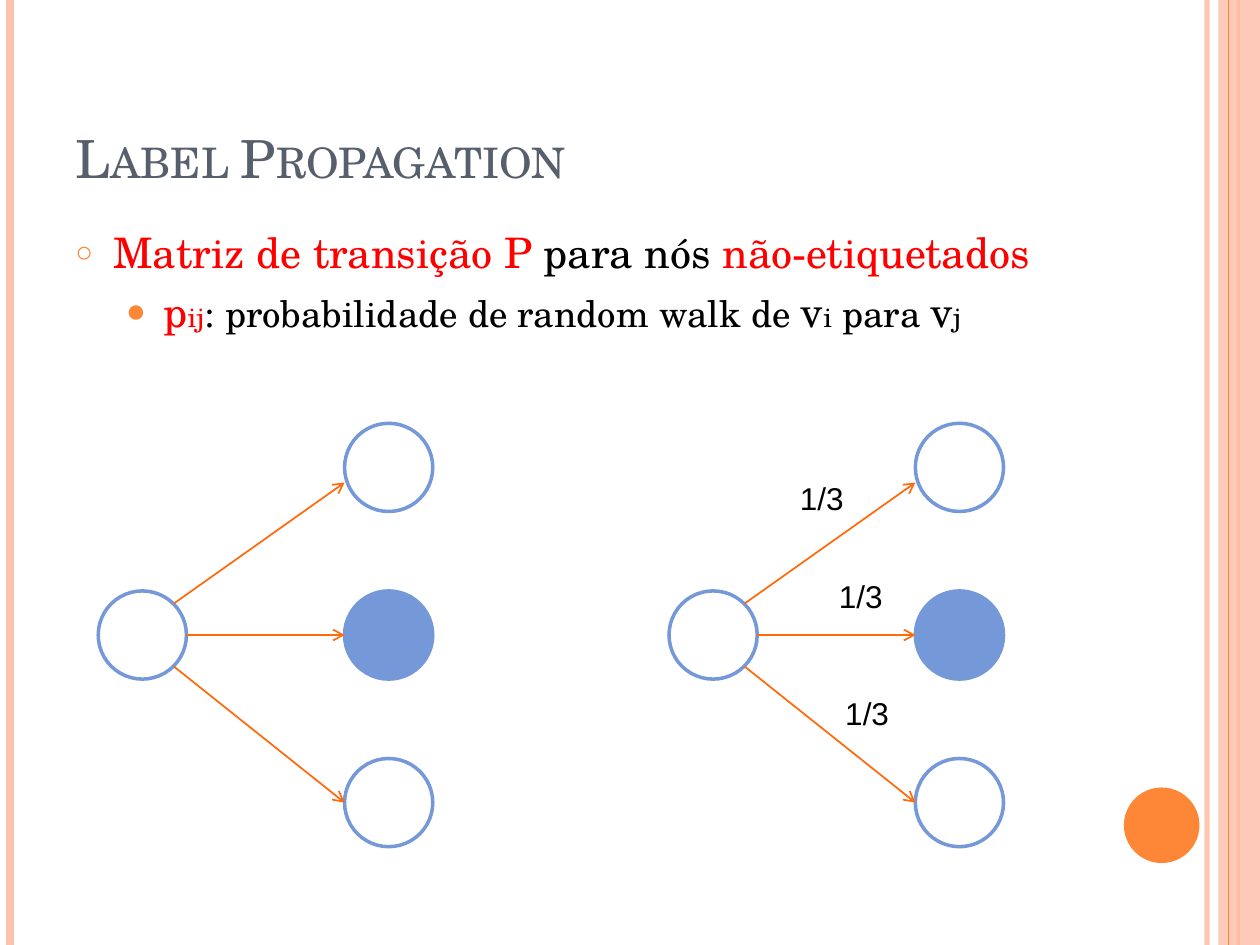
from typing import NamedTuple, Optional

from lxml.etree import SubElement
from pptx import Presentation
from pptx.dml.color import RGBColor
from pptx.enum.shapes import MSO_CONNECTOR, MSO_SHAPE
from pptx.enum.text import MSO_ANCHOR, MSO_AUTO_SIZE
from pptx.oxml.ns import qn
from pptx.util import Inches, Pt

SERIF, SANS = "TeX Gyre Schola", "Arial"
ORANGE, PEACH, ARROW = "FE8637", "FEC3AE", "FF6B0A"
BLUE, SLATE, RED, BLACK = "7598D9", "575F6D", "FF0000", "000000"
NODE_SIZE = 0.7


class Stripe(NamedTuple):
    x: float
    color: str
    width: float
    opacity: int = 100


class Piece(NamedTuple):
    text: str
    size: float
    color: str = BLACK
    font: str = SERIF


class Bullet(NamedTuple):
    char: str
    percent: int
    margin: float
    level: int
    space_before: float
    pieces: list[Piece]


class Node(NamedTuple):
    dx: float
    y: float
    filled: bool = False


class Edge(NamedTuple):
    start: tuple[float, float]
    end: tuple[float, float]


class Label(NamedTuple):
    x: float
    y: float


def rgb(color: str) -> RGBColor:
    return RGBColor.from_string(color)


def set_opacity(fill_parent, percent: int) -> None:
    if percent < 100:
        color = next(fill_parent.iter(qn("a:srgbClr")))
        SubElement(color, qn("a:alpha"), val=str(percent * 1000))


def add_line(slide, start: tuple[float, float], end: tuple[float, float],
             color: str, width: float, opacity: int = 100, arrow: bool = False) -> None:
    connector = slide.shapes.add_connector(
        MSO_CONNECTOR.STRAIGHT, *(Inches(v) for v in (*start, *end)))
    connector.line.color.rgb = rgb(color)
    connector.line.width = Pt(width)
    properties = connector._element.spPr
    outline = properties.find(qn("a:ln"))
    set_opacity(outline, opacity)
    if arrow:
        SubElement(outline, qn("a:tailEnd"), type="arrow")
    SubElement(properties, qn("a:effectLst"))


def add_shape(slide, kind: MSO_SHAPE, box: tuple[float, float, float, float],
              fill: Optional[str] = None, line: Optional[str] = None,
              opacity: int = 100) -> None:
    shape = slide.shapes.add_shape(kind, *(Inches(v) for v in box))
    shape.shadow.inherit = False
    if fill:
        shape.fill.solid()
        shape.fill.fore_color.rgb = rgb(fill)
        set_opacity(shape._element.spPr, opacity)
    else:
        shape.fill.background()
    if line:
        shape.line.color.rgb = rgb(line)
        shape.line.width = Pt(2)
    else:
        shape.line.fill.background()


def add_frame(slide, box: tuple[float, float, float, float], wrap: bool = True):
    frame = slide.shapes.add_textbox(*(Inches(v) for v in box)).text_frame
    frame.word_wrap = wrap
    return frame


def add_piece(paragraph, piece: Piece):
    run = paragraph.add_run()
    run.text = piece.text
    run.font.size = Pt(piece.size)
    run.font.name = piece.font
    run.font.color.rgb = rgb(piece.color)
    return run


def add_bullet(paragraph, bullet: Bullet) -> None:
    paragraph.level = bullet.level
    paragraph.space_before = Pt(bullet.space_before)
    properties = paragraph._p.get_or_add_pPr()
    properties.set("marL", str(Inches(bullet.margin)))
    properties.set("indent", str(Inches(-0.3)))
    color = SubElement(properties, qn("a:buClr"))
    SubElement(color, qn("a:srgbClr"), val=ORANGE)
    SubElement(properties, qn("a:buSzPct"), val=str(bullet.percent * 1000))
    SubElement(properties, qn("a:buFont"), typeface=SANS)
    SubElement(properties, qn("a:buChar"), char=bullet.char)
    for piece in bullet.pieces:
        add_piece(paragraph, piece)


def add_graph(slide, left: float, nodes: list[Node], edges: list[Edge]) -> None:
    for node in nodes:
        add_shape(slide, MSO_SHAPE.OVAL, (left + node.dx, node.y, NODE_SIZE, NODE_SIZE),
                  BLUE if node.filled else None, BLUE)
    for edge in edges:
        (x1, y1), (x2, y2) = edge
        add_line(slide, (left + x1, y1), (left + x2, y2), ARROW, 1, arrow=True)


# Frame of the page
LEFT_STRIPES = [Stripe(9.58, PEACH, 3, 93), Stripe(0.08, PEACH, 4.5),
                Stripe(9.83, ORANGE, 1.5)]
RIGHT_STRIPE = Stripe(9.75, ORANGE, 0.75)

# Bulleted text
BULLETS = [
    Bullet("○", 70, 0.3, 0, 0, [
        Piece("Matriz de transição P ", 24, RED), Piece("para nós ", 24),
        Piece("não-etiquetados", 24, RED)]),
    Bullet("●", 80, 0.7, 1, 5, [
        Piece("p", 24, RED), Piece("ij", 16, RED),
        Piece(": probabilidade de random walk de ", 21),
        Piece("v", 24), Piece("i", 16), Piece(" para ", 21),
        Piece("v", 24), Piece("j", 16)]),
]

# One graph, measured from its left edge, and its two places
GRAPH_LEFTS = (0.78, 5.31)
NODES = [Node(0, 4.69), Node(1.955, 3.36), Node(1.955, 4.69, True), Node(1.955, 6.02)]
EDGES = [Edge((0.6, 4.79), (1.955, 3.83)), Edge((0.7, 5.04), (1.955, 5.04)),
         Edge((0.6, 5.29), (1.955, 6.37))]
LABELS = [Label(6.25, 3.75), Label(6.56, 4.53), Label(6.61, 5.46)]


def main() -> None:
    deck = Presentation()
    deck.slide_width, deck.slide_height = Inches(10), Inches(7.5)
    slide = deck.slides.add_slide(deck.slide_layouts[6])

    # Decoration
    for stripe in LEFT_STRIPES:
        add_line(slide, (stripe.x, 0), (stripe.x, 7.5), *stripe[1:])
    add_shape(slide, MSO_SHAPE.RECTANGLE, (9.67, 0, 0.33, 7.5), PEACH, opacity=87)
    add_line(slide, (RIGHT_STRIPE.x, 0), (RIGHT_STRIPE.x, 7.5), *RIGHT_STRIPE[1:])
    add_shape(slide, MSO_SHAPE.OVAL, (8.92, 6.25, 0.6, 0.6), ORANGE)

    # Title
    title = add_frame(slide, (0.5, 0.3, 8.17, 1.25))
    title.vertical_anchor = MSO_ANCHOR.BOTTOM
    heading = add_piece(title.paragraphs[0], Piece("Label Propagation", 30, SLATE))
    heading.font._element.set("cap", "small")

    # Body
    body = add_frame(slide, (0.5, 1.75, 8.17, 5.33))
    for index, bullet in enumerate(BULLETS):
        add_bullet(body.add_paragraph() if index else body.paragraphs[0], bullet)

    # Graphs and transition probabilities
    for left in GRAPH_LEFTS:
        add_graph(slide, left, NODES, EDGES)
    for label in LABELS:
        frame = add_frame(slide, (label.x, label.y, 0.55, 0.4), wrap=False)
        frame.auto_size = MSO_AUTO_SIZE.SHAPE_TO_FIT_TEXT
        add_piece(frame.paragraphs[0], Piece("1/3", 18, BLACK, SANS))

    deck.save("out.pptx")


if __name__ == "__main__":
    main()
